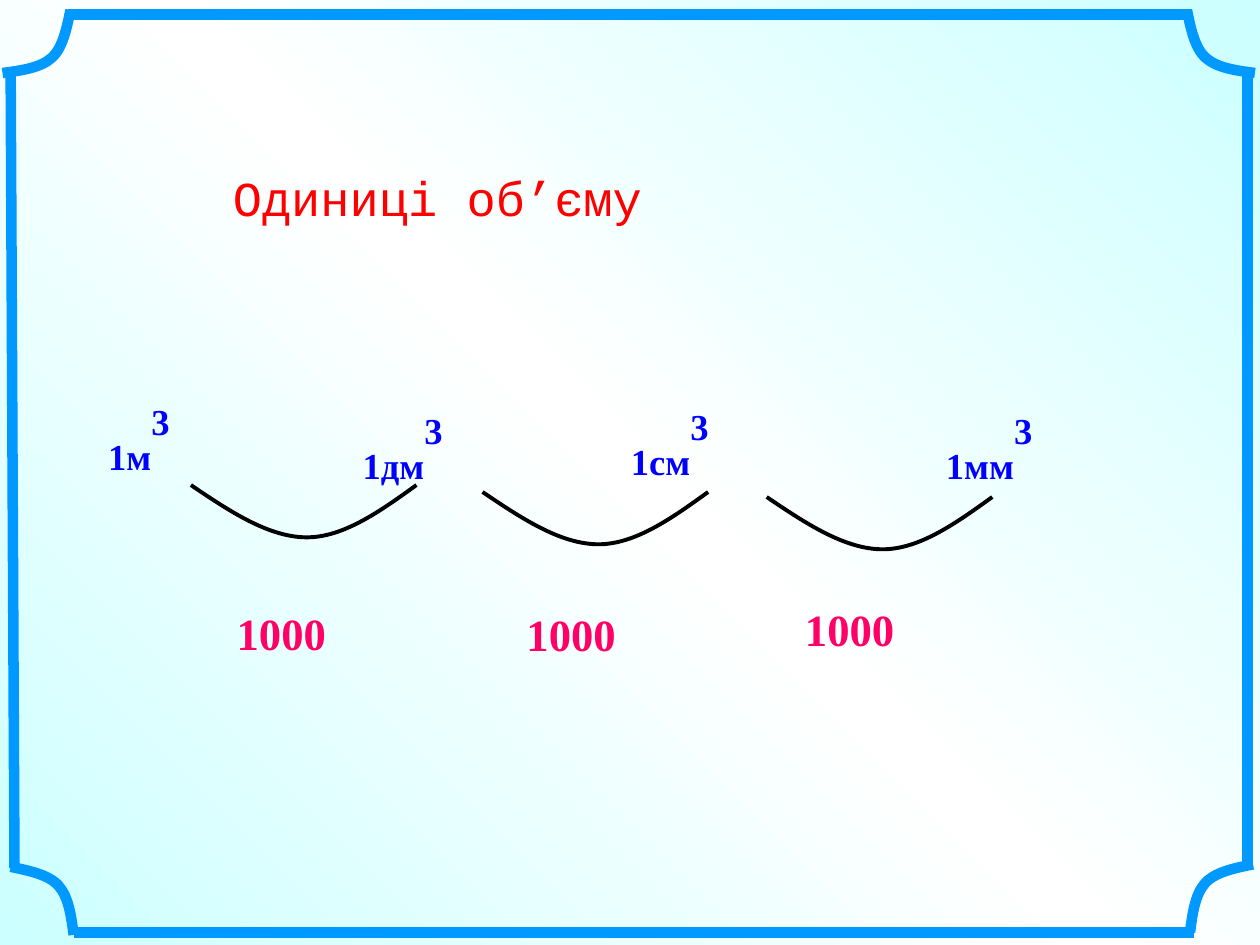
import copy
from dataclasses import dataclass

import pptx
import pptx.dml.color
import pptx.enum.shapes
import pptx.enum.text
import pptx.oxml.ns
import pptx.util


@dataclass(frozen=True)
class Theme:
    edge: str = "0099FF"
    ink: str = "000000"
    pale: str = "CCFFFF"
    white: str = "FFFFFF"
    title: tuple = ("Courier New", 48, "FF0000", False)
    unit: tuple = ("Times New Roman", 36, "0000FF", True)
    factor: tuple = ("Times New Roman", 44, "FF0066", True)
    thin: float = 2.25
    thick: float = 6


def paint(code):
    return pptx.dml.color.RGBColor.from_string(code)


def apply(item, values):
    for name, value in values.items():
        setattr(item, name, value)


class Board:
    cols, rows = 100, 75

    def __init__(self, deck, theme):
        self.theme = theme
        self.cell = deck.slide_width / self.cols
        self.slide = deck.slides.add_slide(deck.slide_layouts[6])

    def span(self, count):
        return round(count * self.cell)

    def back(self):
        fill = self.slide.background.fill
        fill.gradient()
        fill.gradient_angle = 45
        last = fill.gradient_stops[1]._gs
        last.addprevious(copy.deepcopy(last))
        colors = (self.theme.pale, self.theme.white, self.theme.pale)
        for stop, place, code in zip(fill.gradient_stops, (0, 0.5, 1), colors):
            stop.position = place
            stop.color.rgb = paint(code)

    def text(self, area, parts, style, wrap=False):
        face, size, code, bold = style
        frame = self.slide.shapes.add_textbox(*map(self.span, area)).text_frame
        apply(frame, {
            "word_wrap": wrap,
            "auto_size": pptx.enum.text.MSO_AUTO_SIZE.SHAPE_TO_FIT_TEXT,
        })
        for words, shift in parts:
            run = frame.paragraphs[0].add_run()
            run.text = words
            apply(run.font, {"name": face, "size": pptx.util.Pt(size), "bold": bold})
            run.font.color.rgb = paint(code)
            run.font._element.set("baseline", str(shift * 1000))

    def stroke(self, shape, code, width):
        shape.line.color.rgb = paint(code)
        shape.line.width = pptx.util.Pt(width)

    def curve(self, start, nodes, code, width, flip=(1, 1)):
        points = [tuple(100 * (s + f * n) for s, f, n in zip(start, flip, node))
                  for node in nodes]
        path = self.slide.shapes.build_freeform(*points[0], scale=self.cell / 100)
        path.add_line_segments(points[1:], close=False)
        shape = path.convert_to_shape()
        self.bend(shape)
        shape.shadow.inherit = False
        shape.fill.background()
        self.stroke(shape, code, width)

    def bend(self, shape):
        lines = list(shape._element.iter(pptx.oxml.ns.qn("a:lnTo")))
        for first in range(0, len(lines), 3):
            group = lines[first:first + 3]
            cubic = group[0].makeelement(pptx.oxml.ns.qn("a:cubicBezTo"), {})
            group[0].addprevious(cubic)
            for line in group:
                cubic.append(line[0])
                line.getparent().remove(line)

    def rule(self, *ends):
        kind = pptx.enum.shapes.MSO_CONNECTOR.STRAIGHT
        line = self.slide.shapes.add_connector(kind, *map(self.span, ends))
        self.stroke(line, self.theme.edge, self.theme.thick)
        props = line._element.spPr
        props.append(props.makeelement(pptx.oxml.ns.qn("a:effectLst"), {}))


def main():
    deck = pptx.Presentation()
    apply(deck, {"slide_width": pptx.util.Inches(10), "slide_height": pptx.util.Inches(7.5)})
    theme = Theme()
    board = Board(deck, theme)
    board.back()

    board.text((17.5, 8.4, 61.4, 9), [("Одиниці об’єму", -25)], theme.title, True)
    units = (("1м", 7.6, 30.6, 9.9), ("1дм", 27.8, 31.3, 13.1),
             ("1см", 49.1, 31, 12.7), ("1мм", 74.1, 31.3, 13.6))
    for name, left, top, width in units:
        board.text((left, top, width, 7), [(name, -25), ("3", 30)], theme.unit)

    bow = ((0, 0), (3.1, 2.1), (6.2, 4.15), (9.2, 4.15), (12.1, 4.15), (15, 2.1), (17.9, 0))
    for start in ((15.15, 38.5), (38.3, 39.05), (60.85, 39.45)):
        board.curve(start, bow, theme.ink, theme.thin)
    for left, top in ((17.8, 43.5), (40.8, 43.6), (62.9, 43.2)):
        board.text((left, top, 14.2, 8.3), [("1000", -25)], theme.factor)

    for ends in ((5.4, 1.15, 94.6, 1.15), (5.9, 74, 94.8, 74),
                 (99, 5.9, 99, 68.9), (0.85, 5.9, 1.15, 68.9)):
        board.rule(*ends)
    nook = ((0, 0), (1.4, 0.3), (3, 0.6), (3.8, 1.5), (4.6, 2.4), (4.8, 3.9), (5, 5.4))
    turned = [(y, x) for x, y in nook]
    corners = (((0.85, 68.8), nook, (1, 1)), ((99.45, 68.6), nook, (-1, 1)),
               ((94.2, 0.8), turned, (1, 1)), ((5.6, 0.8), turned, (-1, 1)))
    for start, nodes, flip in corners:
        board.curve(start, nodes, theme.edge, theme.thick, flip)
    deck.save("out.pptx")


if __name__ == "__main__":
    main()
